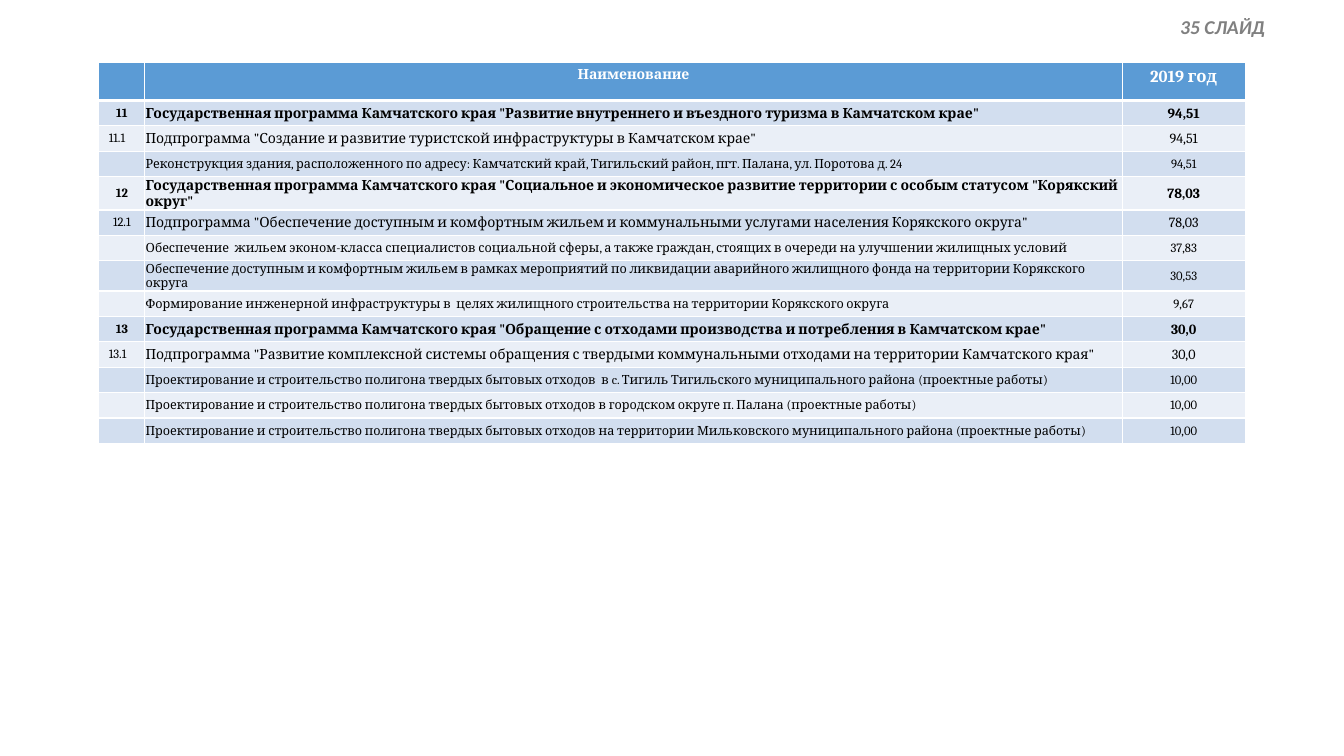
from dataclasses import dataclass

from lxml.etree import SubElement
from pptx import Presentation
from pptx.dml.color import RGBColor
from pptx.enum.text import MSO_ANCHOR, PP_ALIGN
from pptx.oxml.ns import qn
from pptx.util import Cm, Pt


@dataclass(frozen=True)
class Theme:
    serif: str = "Cambria"
    sans: str = "Calibri"
    head: str = "5B9BD5"
    bands: tuple[str, str] = ("D2DEEF", "EAEFF7")
    white: str = "FFFFFF"
    black: str = "000000"
    gray: str = "808080"
    small: int = 9
    body: int = 10
    large: int = 12
    label: int = 14


@dataclass(frozen=True)
class Entry:
    code: str
    name: str
    value: str
    height: float = 0.64
    left: bool = False

    @property
    def bold(self) -> bool:
        return bool(self.code) and "." not in self.code


THEME = Theme()
WIDTHS = (1.16, 24.63, 3.1)
TOP = 0.97
ENTRIES = (
    Entry("11", 'Государственная программа Камчатского края "Развитие внутреннего и въездного туризма в Камчатском крае"', "94,51"),
    Entry("11.1", 'Подпрограмма "Создание и развитие туристской инфраструктуры в Камчатском крае"', "94,51", left=True),
    Entry("", "Реконструкция здания, расположенного по адресу: Камчатский край, Тигильский район, пгт. Палана, ул. Поротова д. 24", "94,51"),
    Entry("12", 'Государственная программа Камчатского края "Социальное и экономическое развитие территории с особым статусом "Корякский округ"', "78,03", 0.84),
    Entry("12.1", 'Подпрограмма "Обеспечение доступным и комфортным жильем и коммунальными услугами населения Корякского округа"', "78,03"),
    Entry("", "Обеспечение  жильем эконом-класса специалистов социальной сферы, а также граждан, стоящих в очереди на улучшении жилищных условий", "37,83"),
    Entry("", "Обеспечение доступным и комфортным жильем в рамках мероприятий по ликвидации аварийного жилищного фонда на территории Корякского округа", "30,53", 0.76),
    Entry("", "Формирование инженерной инфраструктуры в  целях жилищного строительства на территории Корякского округа", "9,67"),
    Entry("13", 'Государственная программа Камчатского края "Обращение с отходами производства и потребления в Камчатском крае"', "30,0"),
    Entry("13.1", 'Подпрограмма "Развитие комплексной системы обращения с твердыми коммунальными отходами на территории Камчатского края"', "30,0", left=True),
    Entry("", "Проектирование и строительство полигона твердых бытовых отходов  в c. Тигиль Тигильского муниципального района (проектные работы)", "10,00"),
    Entry("", "Проектирование и строительство полигона твердых бытовых отходов в городском округе п. Палана (проектные работы)", "10,00"),
    Entry("", "Проектирование и строительство полигона твердых бытовых отходов на территории Мильковского муниципального района (проектные работы)", "10,00"),
)


def style(line, face: str, size: int, color: str, bold: bool, slant: bool = False) -> None:
    for run in line.runs:
        font = run.font
        font.name, font.size = face, Pt(size)
        font.bold, font.italic = bold, slant
        font.color.rgb = RGBColor.from_string(color)


def edge(cell, base: int) -> None:
    props = cell._tc.get_or_add_tcPr()
    for spot, (side, width) in enumerate((("L", 1), ("R", 1), ("T", 1), ("B", base))):
        line = props.makeelement(qn(f"a:ln{side}"), {"w": str(Pt(width))})
        fill = SubElement(line, qn("a:solidFill"))
        SubElement(fill, qn("a:srgbClr"), val=THEME.white)
        props.insert(spot, line)


def write(cell, text: str, size: int, color: str, bold: bool, align: PP_ALIGN) -> None:
    line = cell.text_frame.paragraphs[0]
    line.text = text
    line.alignment = align
    style(line, THEME.serif, size, color, bold)
    if not text:
        SubElement(line._p, qn("a:endParaRPr"), sz=str(size * 100))


def paint(cell, color: str, base: int = 1) -> None:
    cell.fill.solid()
    cell.fill.fore_color.rgb = RGBColor.from_string(color)
    edge(cell, base)


def draw_head(row) -> None:
    row.height = Cm(TOP)
    sizes = (THEME.body, THEME.body, THEME.large)
    for cell, text, size in zip(row.cells, ("", "Наименование", "2019 год"), sizes):
        write(cell, text, size, THEME.white, True, PP_ALIGN.CENTER)
        paint(cell, THEME.head, 3)


def draw_entry(row, entry: Entry, color: str) -> None:
    row.height = Cm(entry.height)
    size = THEME.body if entry.code else THEME.small
    first = PP_ALIGN.LEFT if entry.left else PP_ALIGN.CENTER
    parts = (
        (entry.code, THEME.small, first),
        (entry.name, size, PP_ALIGN.LEFT),
        (entry.value, size, PP_ALIGN.CENTER),
    )
    for spot, (cell, (text, points, align)) in enumerate(zip(row.cells, parts)):
        write(cell, text, points, THEME.black, entry.bold, align)
        cell.vertical_anchor = MSO_ANCHOR.MIDDLE
        if spot:
            cell.margin_left = cell.margin_right = cell.margin_top = Cm(0.02)
            cell.margin_bottom = Cm(0)
        paint(cell, color)


def draw_table(slide) -> None:
    height = TOP + sum(entry.height for entry in ENTRIES)
    frame = slide.shapes.add_table(
        len(ENTRIES) + 1, len(WIDTHS), Cm(2.49), Cm(1.56), Cm(sum(WIDTHS)), Cm(height)
    )
    table = frame.table
    for column, width in zip(table.columns, WIDTHS):
        column.width = Cm(width)
    head, *rows = table.rows
    draw_head(head)
    for spot, (row, entry) in enumerate(zip(rows, ENTRIES)):
        draw_entry(row, entry, THEME.bands[spot % 2])


def draw_label(slide) -> None:
    box = slide.shapes.add_textbox(Cm(29.49), Cm(0.25), Cm(2.77), Cm(0.86))
    box.text_frame.word_wrap = False
    line = box.text_frame.paragraphs[0]
    line.text = "35 СЛАЙД"
    style(line, THEME.sans, THEME.label, THEME.gray, True, True)


def main() -> None:
    deck = Presentation()
    deck.slide_width, deck.slide_height = Cm(33.87), Cm(19.05)
    slide = deck.slides.add_slide(deck.slide_layouts[6])
    draw_table(slide)
    draw_label(slide)
    deck.save("out.pptx")


if __name__ == "__main__":
    main()
